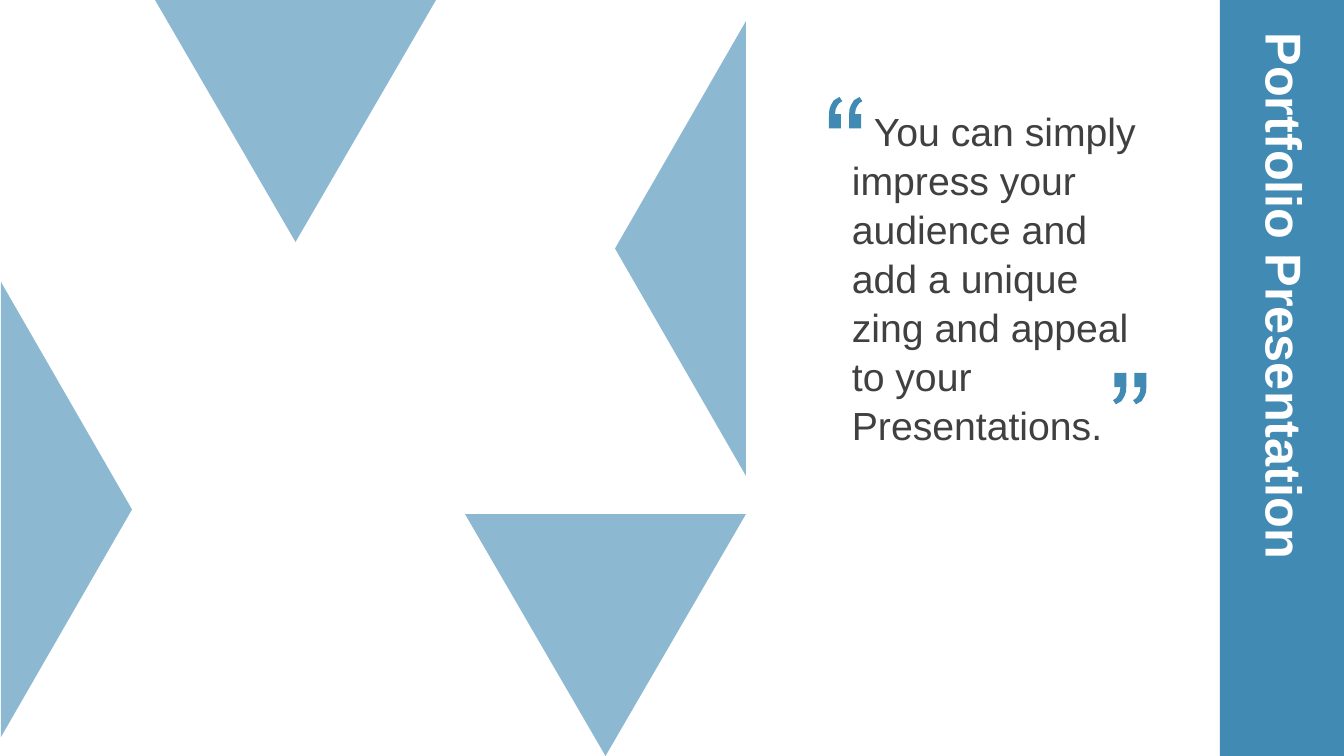
from lxml.etree import SubElement
from pptx import Presentation
from pptx.dml.color import RGBColor
from pptx.enum.shapes import MSO_SHAPE as Preset
from pptx.enum.text import MSO_ANCHOR as Anchor, MSO_AUTO_SIZE as AutoSize, PP_ALIGN as Align
from pptx.oxml.ns import qn
from pptx.util import Emu, Pt

PX = 12192000 / 1344
COLORS = {"blue": "418AB3", "white": "FFFFFF", "ink": "404040"}


def px(*lengths):
    return [Emu(round(length * PX)) for length in lengths]


def paint(shape, color):
    shape.shadow.inherit = False
    shape.fill.solid()
    shape.fill.fore_color.rgb = RGBColor.from_string(COLORS[color])
    shape.line.fill.background()


deck = Presentation()
deck.slide_width, deck.slide_height = px(1344, 756)
slide = deck.slides.add_slide(deck.slide_layouts[5])
shapes = slide.shapes

triangles = [
    (-161, 444, 455, 131, 90),
    (155, 0, 281, 242, 180),
    (465, 514, 281, 242, 180),
    (453, 183, 455, 131, 270),
]
for *box, angle in triangles:
    triangle = shapes.add_shape(Preset.ISOSCELES_TRIANGLE, *px(*box))
    paint(triangle, "blue")
    triangle.rotation = angle
    tint = triangle.element.spPr.find(qn("a:solidFill"))[0]
    SubElement(tint, qn("a:alpha"), val="60000")

sidebar = shapes.add_shape(Preset.RECTANGLE, *px(1220, 0, 124, 756))
paint(sidebar, "blue")

title = shapes.title
sidebar.element.addnext(title.element)
title.left, title.top, title.width, title.height = px(924, 327, 712, 103)
title.rotation = 90

quote = shapes.add_textbox(*px(842, 101, 318, 342))

texts = [
    (title, "Portfolio Presentation", Anchor.MIDDLE, Align.JUSTIFY, 0.8,
     {"size": Pt(36), "bold": True}, "white"),
    (quote, "You can simply impress your audience and add a unique zing and appeal to your Presentations.",
     Anchor.TOP, Align.LEFT, 1.04, {"size": Pt(28), "bold": False}, "ink"),
]
for holder, wording, anchor, align, spacing, font_format, color in texts:
    frame = holder.text_frame
    frame.text = wording
    frame.word_wrap = True
    frame.auto_size = AutoSize.NONE
    frame.vertical_anchor = anchor
    paragraph = frame.paragraphs[0]
    paragraph.alignment = align
    paragraph.line_spacing = spacing
    font = paragraph.runs[0].font
    for attribute, value in {"name": "Arial", **font_format}.items():
        setattr(font, attribute, value)
    font.color.rgb = RGBColor.from_string(COLORS[color])

first_line_indent = px(22)[0]
quote.text_frame.paragraphs[0]._p.get_or_add_pPr().set("indent", str(first_line_indent))

comma = [
    (105, 0), (134, 42), (102, 62), (81, 92), (67, 123), (60, 171), (121, 171),
    (121, 313), (0, 313), (0, 202), (4, 126), (20, 81), (49, 33),
]
comma_gap = 201
for left, top, angle in [(829, 97, 0), (1113, 373, 180)]:
    outline = shapes.build_freeform(*comma[0], scale=PX / 10)
    outline.add_line_segments(comma[1:])
    second = [(x + comma_gap, y) for x, y in comma]
    outline.move_to(*second[0])
    outline.add_line_segments(second[1:])
    mark = outline.convert_to_shape(*px(left, top))
    paint(mark, "blue")
    mark.rotation = angle

deck.save("out.pptx")
